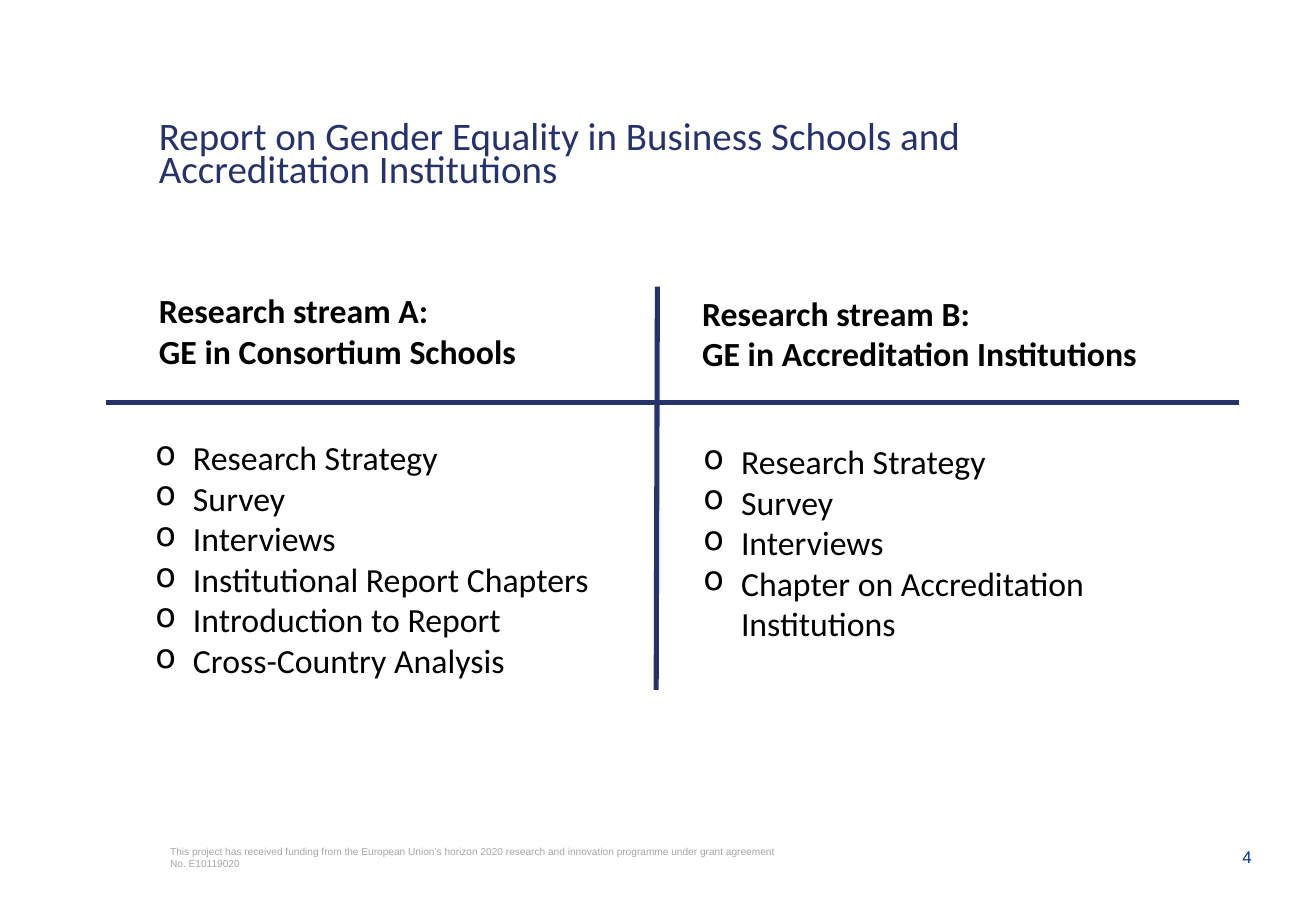
from lxml import etree
from pptx import Presentation
from pptx.dml.color import RGBColor
from pptx.enum import shapes, text
from pptx.oxml.ns import qn
from pptx.util import Inches, Pt

HUES = {"navy": "26336B", "black": "000000", "grey": "A6A6A6", "blue": "00338D"}
TITLE = ["Report on Gender Equality in Business Schools and Accreditation Institutions", ""]
FUND = ("This project has received funding from the European Union’s horizon 2020 "
        "research and innovation programme under grant agreement No. E10119020")
PAGE = "4"
STREAMS = [
    {"head": ["Research stream A:", "GE in Consortium Schools"],
     "head_at": (1.21, 2.34, 3.87, 0.77),
     "tasks": ["Research Strategy", "Survey", "Interviews", "Institutional Report Chapters",
               "Introduction to Report", "Cross-Country Analysis"],
     "tasks_at": (1.18, 3.55, 4.21, 2.12)},
    {"head": ["Research stream B:", "GE in Accreditation Institutions"],
     "head_at": (5.68, 2.36, 4.46, 0.77),
     "tasks": ["Research Strategy", "Survey", "Interviews",
               "Chapter on Accreditation Institutions"],
     "tasks_at": (5.69, 3.58, 4.64, 1.45)},
]
RULES = [(5.41, 2.36, 5.4, 5.68), (0.87, 3.31, 10.2, 3.31)]
INDENT = Inches(0.31)

deck = Presentation()
deck.slide_width, deck.slide_height = Inches(10.83), Inches(7.5)
slide = deck.slides.add_slide(deck.slide_layouts[6])


def add_box(at, anchor=text.MSO_ANCHOR.TOP, bare=False):
    frame = slide.shapes.add_textbox(*map(Inches, at)).text_frame
    frame.word_wrap = True
    frame.vertical_anchor = anchor
    if bare:
        frame.margin_left = frame.margin_right = frame.margin_top = frame.margin_bottom = 0
    return frame


def add_run(para, words, size, hue="black", face="Calibri", bold=False):
    run = para.add_run()
    run.text = words
    run.font.size, run.font.name, run.font.bold = Pt(size), face, bold
    run.font.color.rgb = RGBColor.from_string(HUES[hue])


def add_list(at, lines, bold=False, bullet=None):
    frame = add_box(at)
    for i, line in enumerate(lines):
        para = frame.add_paragraph() if i else frame.paragraphs[0]
        if bullet:
            props = para._p.get_or_add_pPr()
            props.set("marL", str(INDENT))
            props.set("indent", str(-INDENT))
            etree.SubElement(props, qn("a:buChar")).set("char", bullet)
        add_run(para, line, 20, bold=bold)


para = add_box((10.03, 6.98, 0.27, 0.16), text.MSO_ANCHOR.BOTTOM, True).paragraphs[0]
para.alignment = text.PP_ALIGN.RIGHT
add_run(para, PAGE, 10, "blue", "Arial")

para = add_box((1.4, 6.96, 4.99, 0.3), bare=True).paragraphs[0]
add_run(para, FUND, 6, "grey", "Arial")

para = add_box((1.21, 0.97, 8.17, 0.95), text.MSO_ANCHOR.MIDDLE).paragraphs[0]
para.line_spacing = 0.7
add_run(para, "\v".join(TITLE).strip(), 23.1, "navy")
para.add_line_break()

for rule in RULES:
    line = slide.shapes.add_connector(shapes.MSO_CONNECTOR.STRAIGHT, *map(Inches, rule))
    line.line.color.rgb = RGBColor.from_string(HUES["navy"])
    line.line.width = Pt(3)
    etree.SubElement(line._element.spPr, qn("a:effectLst"))

for stream in STREAMS:
    add_list(stream["head_at"], stream["head"], bold=True)
    add_list(stream["tasks_at"], stream["tasks"], bullet="o")

deck.save("out.pptx")
